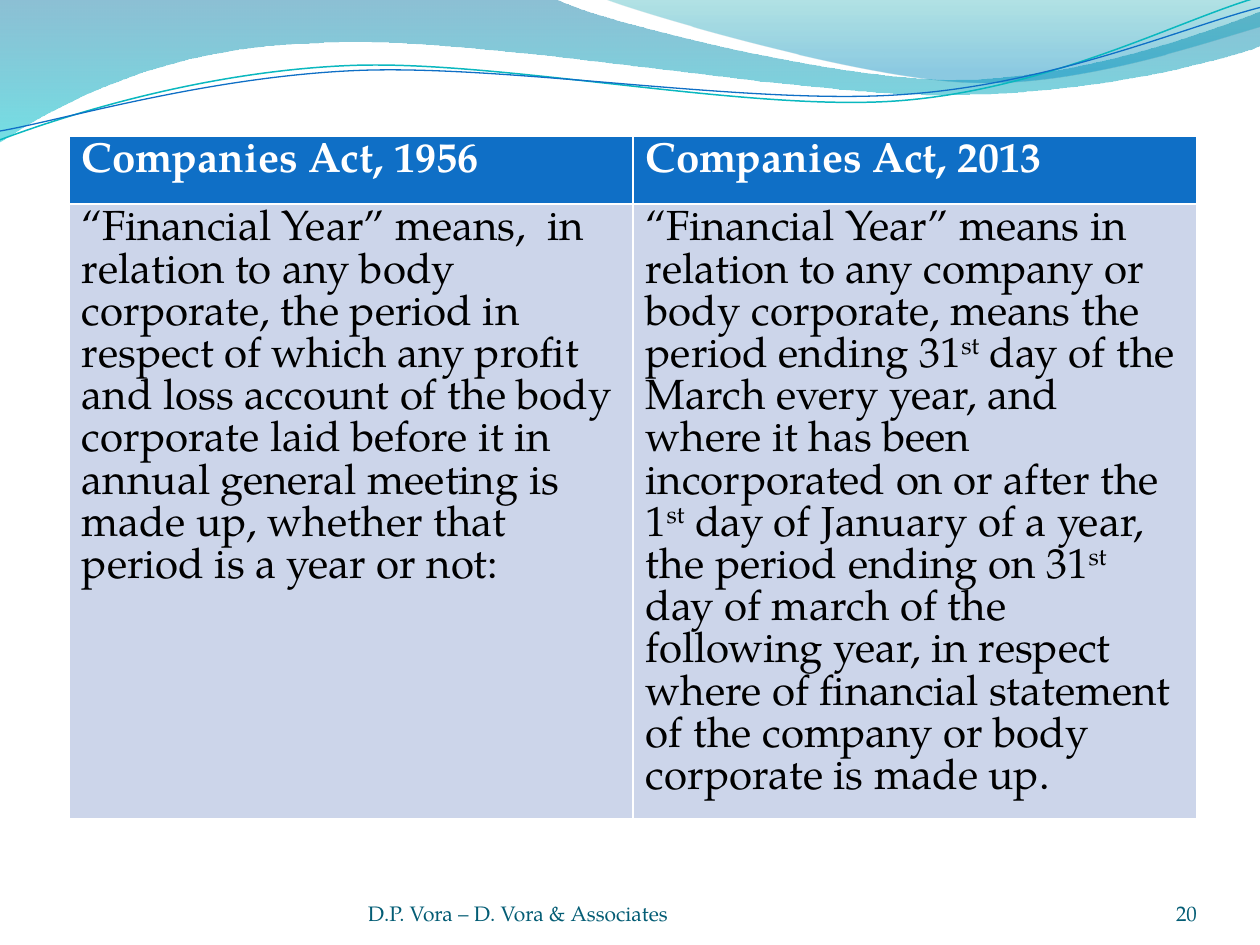
import math

from lxml import etree
from pptx import Presentation
from pptx import util as u
from pptx.dml import color
from pptx.enum import text
from pptx.oxml import ns

FONT = "TeX Gyre Pagella"
WHITE, BLUE, PALE, BLACK, TEAL = "FFFFFF", "0F6FC6", "CCD5EA", "000000", "045D75"
TILT = 357.3

BROAD_WAVE = [
    (0, 0), (4.4, -0.01),
    (4.76, 0.17, 6.64, 0.63, 7.58, 0.63), (8.53, 0.63, 9.58, 0.26, 10, 0.09),
    (10.01, 0.36),
    (9.83, 0.44, 8.7, 0.76, 7.46, 0.75), (6.22, 0.75, 3.82, 0.28, 2.57, 0.34),
    (1.29, 0.36, 0.46, 0.83, -0.01, 1.13)]
RIGHT_WAVE = [
    (4.79, -0.01),
    (5.09, 0.11, 6.82, 0.62, 7.69, 0.65), (8.56, 0.69, 9.61, 0.32, 10, 0.21),
    (10, 0)]
TEAL_STRAND = [
    (0, 1.11), (0.48, 0.93, 1.58, 0.57, 2.77, 0.52),
    (3.95, 0.47, 5.93, 0.89, 7.13, 0.8), (8.33, 0.71, 9.38, 0.15, 9.98, -0.02)]
BLUE_STRAND = [
    (0, 1.04), (0.47, 0.96, 1.64, 0.61, 2.83, 0.56),
    (4.03, 0.51, 5.97, 0.84, 7.17, 0.75), (8.36, 0.67, 9.41, 0.21, 10, 0.06)]

HEADINGS = ["Companies Act, 1956", "Companies Act, 2013"]
DEFINITIONS = [
    ["“Financial Year” means,  in relation to any body corporate, the period in "
     "respect of which any profit and loss account of the body corporate laid before "
     "it in annual general meeting is made up, whether that period is a year or not:"],
    ["“Financial Year” means in relation to any company or body corporate, means the "
     "period ending 31", "st",
     " day of the March every year, and where it has been incorporated on or after "
     "the 1", "st", " day of January of a year, the period ending on 31", "st",
     " day of march of the following year, in respect where of financial statement "
     "of the company or body corporate is made up."]]


def rgb(value):
    """Turn a hex string into a colour."""
    return color.RGBColor.from_string(value)


def pairs(step):
    """Split a step into its points."""
    return list(zip(step[::2], step[1::2]))


def level(steps, middle):
    """Turn the steps about the middle so that the tilt brings them back."""
    angle = math.radians(360 - TILT)
    across, down = math.cos(angle), math.sin(angle)
    turned = []
    for step in steps:
        flat = ()
        for x, y in pairs(step):
            x, y = x - middle[0], y - middle[1]
            flat += (middle[0] + x * across - y * down, middle[1] + x * down + y * across)
        turned.append(flat)
    return turned


def add_outline(page, steps, left, top, closed):
    """Add a freeform of straight and cubic steps measured from left and top."""
    points = [(left + u.Inches(x), top + u.Inches(y)) for step in steps for x, y in pairs(step)]
    builder = page.shapes.build_freeform(*points[0])
    builder.add_line_segments(points[1:], close=closed)
    shape = builder.convert_to_shape()
    shape.shadow.inherit = False
    segments = iter(list(shape._element.iter(ns.qn("a:lnTo"))))
    for step in steps[1:]:
        group = [next(segments) for _ in pairs(step)]
        if len(group) == 3:
            curve = etree.Element(ns.qn("a:cubicBezTo"))
            group[0].addprevious(curve)
            for segment in group:
                curve.append(segment[0])
                segment.getparent().remove(segment)
    return shape


def add_wave(page, steps, left, top, stops):
    """Add a wave with a see-through gradient running downwards."""
    shape = add_outline(page, steps, left, top, True)
    shape.line.fill.background()
    shape.fill.gradient()
    shape.fill.gradient_angle = 270
    for stop, (position, value, opacity) in zip(shape.fill.gradient_stops, stops):
        stop.position = position
        stop.color.rgb = rgb(value)
        for node in stop._gs.iter(ns.qn("a:srgbClr")):
            etree.SubElement(node, ns.qn("a:alpha")).set("val", str(opacity * 1000))


def add_strand(page, steps, left, top, middle, value, width):
    """Add a thin open curve, tilted about its middle."""
    shape = add_outline(page, level(steps, middle), left, top, False)
    shape.rotation = TILT
    shape.fill.background()
    shape.line.color.rgb = rgb(value)
    shape.line.width = u.Pt(width)


def add_banner(page, left, top):
    """Add the waves and strands across the head of the slide."""
    add_wave(page, BROAD_WAVE, left, top, [(0, "0074A1", 45), (1, "00C6CF", 55)])
    add_wave(page, RIGHT_WAVE, left, top, [(0, "00A1A9", 30), (0.8, "008BBF", 45)])
    add_strand(page, TEAL_STRAND, left, top, (4.99, 0.57), "0AB8BF", 0.85)
    add_strand(page, BLUE_STRAND, left, top, (5, 0.59), BLUE, 0.75)


def write(para, parts, size, value, bold=False):
    """Write the parts as runs, raising every second one."""
    for index, part in enumerate(parts):
        span = para.add_run()
        span.text = part
        span.font.name = FONT
        span.font.size = u.Pt(size)
        span.font.bold = bold
        span.font.color.rgb = rgb(value)
        if index % 2:
            span._r.get_or_add_rPr().set("baseline", "30000")


def add_comparison(page, left, top, width, height, row_heights):
    """Add the table that sets the two definitions side by side."""
    frame = page.shapes.add_table(2, 2, left, top, width, height)
    rows = [([[heading] for heading in HEADINGS], BLUE, WHITE, True),
            (DEFINITIONS, PALE, BLACK, False)]
    for index, (entries, back, ink, bold) in enumerate(rows):
        frame.table.rows[index].height = row_heights[index]
        for column, parts in enumerate(entries):
            cell = frame.table.cell(index, column)
            cell.fill.solid()
            cell.fill.fore_color.rgb = rgb(back)
            write(cell.text_frame.paragraphs[0], parts, 24, ink, bold)
    frame.height = height


def add_footer_text(page, left, top, width, height, words, align):
    """Add one footer entry standing on the bottom of its box."""
    frame = page.shapes.add_textbox(left, top, width, height).text_frame
    frame.word_wrap = True
    frame.vertical_anchor = text.MSO_ANCHOR.BOTTOM
    frame.margin_left = frame.margin_right = frame.margin_top = frame.margin_bottom = 0
    para = frame.paragraphs[0]
    para.alignment = align
    write(para, [words], 12, TEAL)


def add_footer(page, left, top, height):
    """Add the firm name and the slide number."""
    add_footer_text(page, left, top, u.Inches(3.67), height,
                    "D.P. Vora – D. Vora & Associates", text.PP_ALIGN.LEFT)
    add_footer_text(page, left + u.Inches(5.75), top, u.Inches(0.83), height,
                    "20", text.PP_ALIGN.RIGHT)


def main():
    """Build the slide and save it."""
    deck = Presentation()
    deck.slide_width, deck.slide_height = u.Inches(10), u.Inches(7.5)
    page = deck.slides.add_slide(deck.slide_layouts[6])
    add_banner(page, u.Inches(0), u.Inches(0))
    add_comparison(page, u.Inches(0.55), u.Inches(1.08), u.Inches(8.95), u.Inches(5.84),
                   [u.Inches(0.54), u.Inches(4.88)])
    add_footer(page, u.Inches(2.92), u.Inches(6.95), u.Inches(0.4))
    deck.save("out.pptx")


if __name__ == "__main__":
    main()
